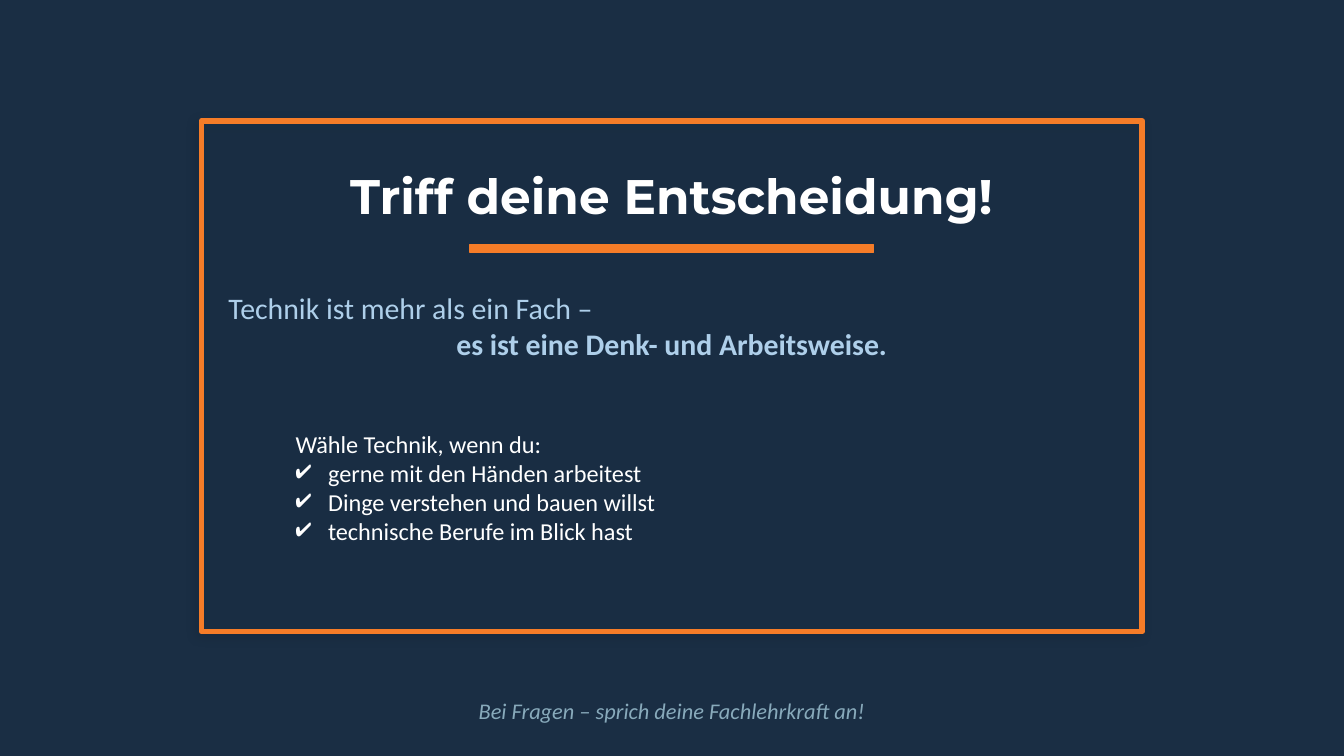
from dataclasses import dataclass

from lxml import etree
from pptx import Presentation
from pptx import util as u
from pptx.dml import color
from pptx.enum import shapes, text
from pptx.oxml import ns


@dataclass(frozen=True)
class Theme:
    navy: str = "1A2E44"
    orange: str = "F57C28"
    white: str = "FFFFFF"
    sky: str = "AECFEA"
    mist: str = "88AABB"
    heading_font: str = "Montserrat"
    body_font: str = "Calibri"
    title: int = 26
    lead: int = 16
    body: int = 13
    footer: int = 12


theme = Theme()
rgb = color.RGBColor.from_string
center = text.PP_ALIGN.CENTER
left = text.PP_ALIGN.LEFT
bullet_indent = u.Pt(17.4)


def write(frame, words, *, size, ink, font=theme.body_font, align=center,
          bold=False, italic=False, bullet=None):
    para = frame.paragraphs[0]
    if para.runs:
        para = frame.add_paragraph()
    para.alignment = align
    if bullet:
        props = para._p.get_or_add_pPr()
        props.set("marL", str(bullet_indent))
        props.set("indent", str(-bullet_indent))
        etree.SubElement(props, ns.qn("a:buChar"), char=bullet)
    span = para.add_run()
    span.text = words
    span.font.name = font
    span.font.size = u.Pt(size)
    span.font.bold = bold
    span.font.italic = italic
    span.font.color.rgb = rgb(ink)


deck = Presentation()
deck.slide_width = u.Pt(720)
deck.slide_height = u.Pt(405)
page = deck.slides.add_slide(deck.slide_layouts[6])
page.background.fill.solid()
page.background.fill.fore_color.rgb = rgb(theme.navy)

panels = []
for x, y, width, height, fill, line_width in (
    (108, 64.8, 504, 273.6, theme.navy, 3),
    (252, 131.04, 216, 4.32, theme.orange, 1),
):
    panel = page.shapes.add_shape(
        shapes.MSO_SHAPE.RECTANGLE, u.Pt(x), u.Pt(y), u.Pt(width), u.Pt(height))
    panel.shadow.inherit = False
    panel.fill.solid()
    panel.fill.fore_color.rgb = rgb(fill)
    panel.line.color.rgb = rgb(theme.orange)
    panel.line.width = u.Pt(line_width)
    panels.append(panel)

card = panels[0]._element.spPr
card_color = card.find(ns.qn("a:solidFill")).find(ns.qn("a:srgbClr"))
etree.SubElement(card_color, ns.qn("a:alpha"), val="85000")
shadow = etree.SubElement(
    card.find(ns.qn("a:effectLst")), ns.qn("a:outerShdw"),
    blurRad=str(u.Pt(6)), dist=str(u.Pt(2)), dir=str(135 * 60000),
    algn="bl", rotWithShape="0")
shadow_color = etree.SubElement(shadow, ns.qn("a:srgbClr"), val="000000")
etree.SubElement(shadow_color, ns.qn("a:alpha"), val="10000")

frames = []
for x, y, width, height in (
    (122.4, 79.2, 475.2, 50.4),
    (122.4, 144, 475.2, 61.2),
    (158.4, 212.4, 403.2, 97.2),
    (0, 367.2, 720, 27.36),
):
    box = page.shapes.add_textbox(u.Pt(x), u.Pt(y), u.Pt(width), u.Pt(height))
    frame = box.text_frame
    frame.word_wrap = True
    frame.vertical_anchor = text.MSO_ANCHOR.MIDDLE
    frame.margin_left = frame.margin_right = u.Pt(0)
    frame.margin_top = frame.margin_bottom = u.Pt(0)
    frames.append(frame)
title, lead, reasons, footer = frames

write(title, "Triff deine Entscheidung!", size=theme.title, ink=theme.white,
      font=theme.heading_font, bold=True)
write(lead, "Technik ist mehr als ein Fach –", size=theme.lead, ink=theme.sky,
      align=left)
write(lead, "es ist eine Denk- und Arbeitsweise.", size=theme.lead,
      ink=theme.sky, bold=True)
write(reasons, "Wähle Technik, wenn du:", size=theme.body, ink=theme.white,
      align=left)
for reason in (
    "gerne mit den Händen arbeitest",
    "Dinge verstehen und bauen willst",
    "technische Berufe im Blick hast",
):
    write(reasons, reason, size=theme.body, ink=theme.white, align=left,
          bullet="✔")
write(footer, "Bei Fragen – sprich deine Fachlehrkraft an!", size=theme.footer,
      ink=theme.mist, italic=True)

deck.save("out.pptx")
